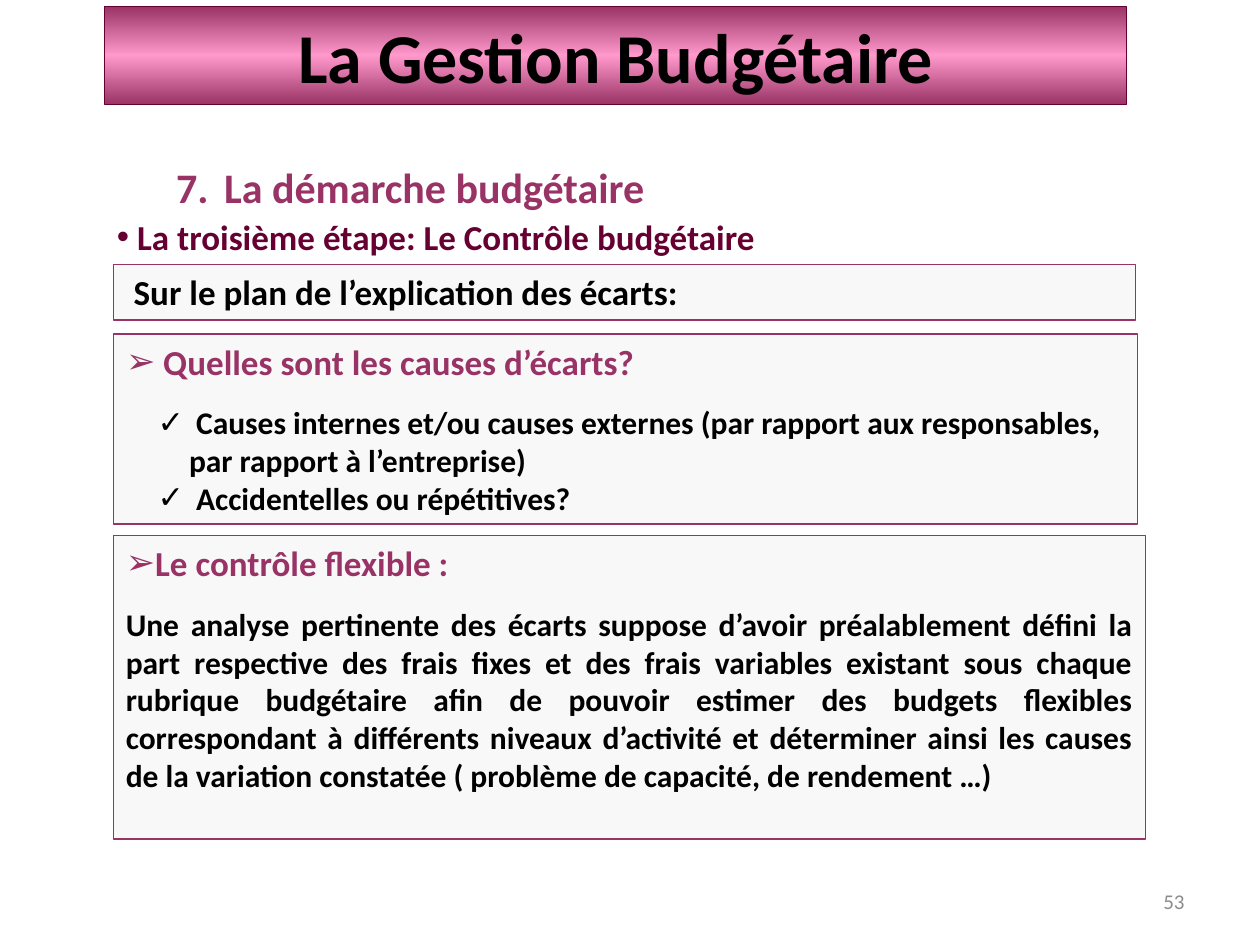
from copy import deepcopy

from lxml.etree import SubElement
from pptx import Presentation
from pptx.dml.color import RGBColor
from pptx.enum.text import MSO_ANCHOR, MSO_AUTO_SIZE, PP_ALIGN
from pptx.enum.shapes import MSO_SHAPE
from pptx.oxml.ns import qn
from pptx.util import Inches, Pt

PLUM = RGBColor(0x99, 0x33, 0x66)
DARK_PLUM = RGBColor(0x66, 0x00, 0x33)
PINK = RGBColor(0xFF, 0x99, 0xCC)
PANEL = RGBColor(0xF8, 0xF8, 0xF8)
BLACK = RGBColor(0, 0, 0)
GREY = RGBColor(0x8C, 0x8C, 0x8C)
FONT = "Calibri"
GAP = Pt(12)
LEFT = 0.9


def place(sp, box):
    sp.left, sp.top, sp.width, sp.height = [Inches(v) for v in box]


def setup_frame(sp, anchor=MSO_ANCHOR.TOP):
    tf = sp.text_frame
    tf.word_wrap = True
    tf.auto_size = MSO_AUTO_SIZE.NONE
    tf.vertical_anchor = anchor
    return tf


def write(p, text, size, color, bold=True, align=PP_ALIGN.LEFT, before=0):
    p.text = text
    p.alignment = align
    p.space_before = before
    for r in p.runs:
        r.font.name = FONT
        r.font.size = Pt(size)
        r.font.bold = bold
        r.font.color.rgb = color


def set_bullet(p, char=None, start=None, margin=0, indent=0):
    """Give a paragraph a character, a start number, or no bullet at all."""
    pPr = p._p.get_or_add_pPr()
    pPr.set("marL", str(Inches(margin)))
    pPr.set("indent", str(Inches(indent)))
    if char:
        SubElement(pPr, qn("a:buFont"), typeface="Arial")
        SubElement(pPr, qn("a:buChar"), char=char)
    elif start:
        SubElement(pPr, qn("a:buFont"), typeface="+mj-lt")
        SubElement(pPr, qn("a:buAutoNum"), type="arabicPeriod", startAt=str(start))
    else:
        SubElement(pPr, qn("a:buNone"))


def style_panel(sp):
    sp.fill.solid()
    sp.fill.fore_color.rgb = PANEL
    sp.line.color.rgb = PLUM
    sp.line.width = Pt(0.75)


def add_panel(slide, box):
    sp = slide.shapes.add_shape(MSO_SHAPE.RECTANGLE, *[Inches(v) for v in box])
    sp.shadow.inherit = False
    style_panel(sp)
    return setup_frame(sp)


def add_text(slide, box, anchor=MSO_ANCHOR.TOP):
    sp = slide.shapes.add_textbox(*[Inches(v) for v in box])
    return setup_frame(sp, anchor)


def fill_title(slide, box):
    sp = slide.shapes.title
    place(sp, box)
    # Three-stop gradient, dark at both edges
    sp.fill.gradient()
    sp.fill.gradient_angle = 90
    first = sp.fill._fill._gradFill.gsLst[0]
    first.addnext(deepcopy(first))
    for stop, pos, color in zip(sp.fill.gradient_stops, (0, 0.5, 1), (PLUM, PINK, PLUM)):
        stop.position = pos
        stop.color.rgb = color
    sp.line.color.rgb = DARK_PLUM
    sp.line.width = Pt(0.75)
    tf = setup_frame(sp, MSO_ANCHOR.MIDDLE)
    write(tf.paragraphs[0], "La Gestion Budgétaire", 40, BLACK, align=PP_ALIGN.CENTER)


def add_headings(slide, section_box, step_box):
    p = add_text(slide, section_box).paragraphs[0]
    write(p, "La démarche budgétaire", 24, PLUM)
    set_bullet(p, start=7, margin=0.38, indent=-0.38)
    p = add_text(slide, step_box).paragraphs[0]
    write(p, " La troisième étape: Le Contrôle budgétaire", 20, DARK_PLUM)
    set_bullet(p, "•")


def add_topic(slide, box):
    p = add_panel(slide, box).paragraphs[0]
    write(p, " Sur le plan de l’explication des écarts:", 20, BLACK)
    p.runs[0].font.size = Pt(20)


def fill_causes(slide, box):
    sp = slide.placeholders[1]
    place(sp, box)
    style_panel(sp)
    tf = setup_frame(sp)
    p = tf.paragraphs[0]
    write(p, " Quelles sont les causes d’écarts?", 20, PLUM)
    set_bullet(p, "➢")
    causes = [
        " Causes internes et/ou causes externes (par rapport aux responsables, "
        "par rapport à l’entreprise)",
        " Accidentelles ou répétitives?",
    ]
    for i, cause in enumerate(causes):
        p = tf.add_paragraph()
        p.level = 1
        write(p, cause, 18, BLACK, before=0 if i else GAP)
        set_bullet(p, "✓", margin=0.5, indent=-0.25)


def add_flexible_control(slide, box):
    tf = add_panel(slide, box)
    p = tf.paragraphs[0]
    write(p, "Le contrôle flexible :", 20, PLUM, align=PP_ALIGN.JUSTIFY)
    set_bullet(p, "➢")
    p = tf.add_paragraph()
    write(
        p,
        "Une analyse pertinente des écarts suppose d’avoir préalablement défini "
        "la part respective des frais fixes et des frais variables existant sous "
        "chaque rubrique budgétaire afin de pouvoir estimer des budgets flexibles "
        "correspondant à différents niveaux d’activité et déterminer ainsi les "
        "causes de la variation constatée ( problème de capacité, de rendement …)",
        18, BLACK, align=PP_ALIGN.JUSTIFY, before=GAP,
    )


def add_page_number(slide, box):
    p = add_text(slide, box, MSO_ANCHOR.MIDDLE).paragraphs[0]
    write(p, "53", 12, GREY, bold=False, align=PP_ALIGN.RIGHT)


def main():
    prs = Presentation()
    prs.slide_width, prs.slide_height = Inches(10), Inches(7.5)
    slide = prs.slides.add_slide(prs.slide_layouts[1])
    fill_title(slide, (0.83, 0.05, 8.11, 0.78))
    add_headings(slide, (1.3, 1.23, 5.75, 0.5), (0.83, 1.66, 8.11, 0.43))
    add_topic(slide, (LEFT, 2.1, 8.11, 0.44))
    fill_causes(slide, (LEFT, 2.65, 8.13, 1.51))
    add_flexible_control(slide, (LEFT, 4.25, 8.19, 2.41))
    add_page_number(slide, (7.17, 6.95, 2.33, 0.4))
    prs.save("out.pptx")


if __name__ == "__main__":
    main()
